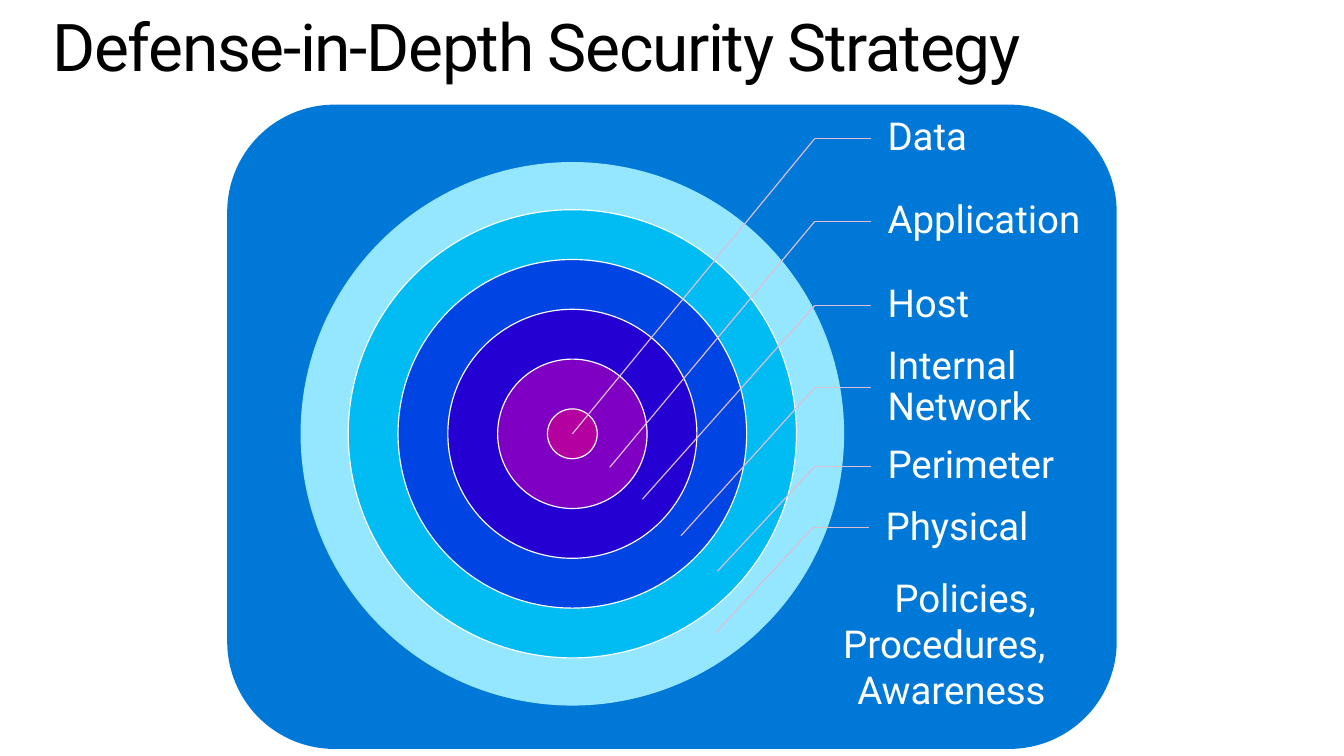
import pptx
import pptx.util
import pptx.dml.color
import pptx.enum.shapes
import pptx.enum.text
import pptx.oxml.ns
import lxml.etree

Cm = pptx.util.Cm
Pt = pptx.util.Pt
SHAPE = pptx.enum.shapes.MSO_SHAPE
ANCHOR = pptx.enum.text.MSO_ANCHOR
ALIGN = pptx.enum.text.PP_ALIGN

COLOURS = {
    "black": "000000", "white": "FFFFFF", "panel": "0078D7", "leader": "DEBDD6",
    "physical": "94E7FF", "perimeter": "00BCF2", "network": "0044E3",
    "host": "2400D3", "application": "7F00C3", "data": "B4009E",
}


def colour(name):
    return pptx.dml.color.RGBColor.from_string(COLOURS[name])


def write_text(shape, text, size=28, font="Roboto", ink="white", align=ALIGN.LEFT,
               anchor=ANCHOR.MIDDLE, insets=(0, 0, 0, 0), line_spacing=None, tracking=None):
    """Fill a shape with one paragraph per line; insets are left, top, right, bottom in cm."""
    frame = shape.text_frame
    frame.word_wrap = True
    frame.vertical_anchor = anchor
    frame.margin_left, frame.margin_top, frame.margin_right, frame.margin_bottom = map(Cm, insets)
    for index, line in enumerate(text.split("\n")):
        para = frame.add_paragraph() if index else frame.paragraphs[0]
        para.alignment = align
        if line_spacing:
            para.line_spacing = line_spacing
        span = para.add_run()
        span.text = line
        span.font.size = Pt(size)
        span.font.name = font
        span.font.color.rgb = colour(ink)
        if tracking:
            span.font._element.set("spc", str(tracking))


class Painter:
    line_width = Pt(0.85)

    def __init__(self, page):
        self.page = page

    def shape(self, kind, left, top, width, height, fill, line=None):
        shape = self.page.shapes.add_shape(kind, Cm(left), Cm(top), Cm(width), Cm(height))
        shape.shadow.inherit = False
        shape.fill.solid()
        shape.fill.fore_color.rgb = colour(fill)
        if line:
            shape.line.color.rgb = colour(line)
            shape.line.width = self.line_width
        else:
            shape.line.fill.background()
        return shape

    def ring(self, centre, diameter, fill, line=None):
        left, top = (value - diameter / 2 for value in centre)
        return self.shape(SHAPE.OVAL, left, top, diameter, diameter, fill, line)

    def text(self, text, left, top, width, height, **style):
        box = self.page.shapes.add_textbox(Cm(left), Cm(top), Cm(width), Cm(height))
        write_text(box, text, **style)
        return box

    def line(self, start, end):
        line = self.page.shapes.add_connector(
            pptx.enum.shapes.MSO_CONNECTOR.STRAIGHT, *map(Cm, start + end))
        line.line.color.rgb = colour("leader")
        line.line.width = self.line_width
        lxml.etree.SubElement(line._element.spPr, pptx.oxml.ns.qn("a:effectLst"))
        return line

    def callout(self, text, left, middle, target):
        """A label with a level leader that bends down to its ring."""
        height, leader = 2.04, 1.44
        label = self.text(text, left, middle - height / 2, 5.77, height,
                          insets=(0.43, 0.08, 0.08, 0.08), line_spacing=0.9)
        elbow = (left - leader, middle)
        self.line(elbow, (left, middle)).end_connect(label, 1)
        self.line(elbow, target)


def main():
    deck = pptx.Presentation()
    deck.slide_width, deck.slide_height = Cm(34.54), Cm(19.43)
    painter = Painter(deck.slides.add_slide(deck.slide_layouts[6]))

    # Panel for the policies layer
    panel = painter.shape(SHAPE.ROUNDED_RECTANGLE, 5.84, 2.69, 22.86, 16.56, "panel")
    write_text(panel, "Policies, \nProcedures,\nAwareness", align=ALIGN.RIGHT,
               anchor=ANCHOR.BOTTOM, insets=(0.51, 0.13, 1.02, 0.13))

    # Title
    painter.text("Defense-in-Depth Security Strategy", 0.94, 0.13, 33.02, 2.54,
                 size=48, ink="black", anchor=ANCHOR.TOP, line_spacing=0.9,
                 insets=(0.41, 0.25, 0.41, 0.25), tracking=-100)

    # Concentric rings, outermost first
    centre = (14.71, 11.15)
    core, step = 1.28, 2.56
    painter.ring(centre, 13.97, "physical")
    inner_rings = ["perimeter", "network", "host", "application", "data"]
    for level, name in enumerate(inner_rings):
        diameter = core + step * (len(inner_rings) - 1 - level)
        painter.ring(centre, diameter, name, line="white")

    # Labels with leaders: text, left, middle, point on the ring
    for callout in [
        ("Data", 22.38, 3.56, centre),
        ("Application", 22.38, 5.69, (15.67, 12.01)),
        ("Host", 22.38, 7.85, (16.51, 12.83)),
        ("Internal Network", 22.38, 9.96, (17.5, 13.77)),
        ("Perimeter", 22.38, 11.99, (18.44, 14.68)),
        ("Physical", 22.33, 13.56, (18.39, 16.26)),
    ]:
        painter.callout(*callout)

    deck.save("out.pptx")


if __name__ == "__main__":
    main()
